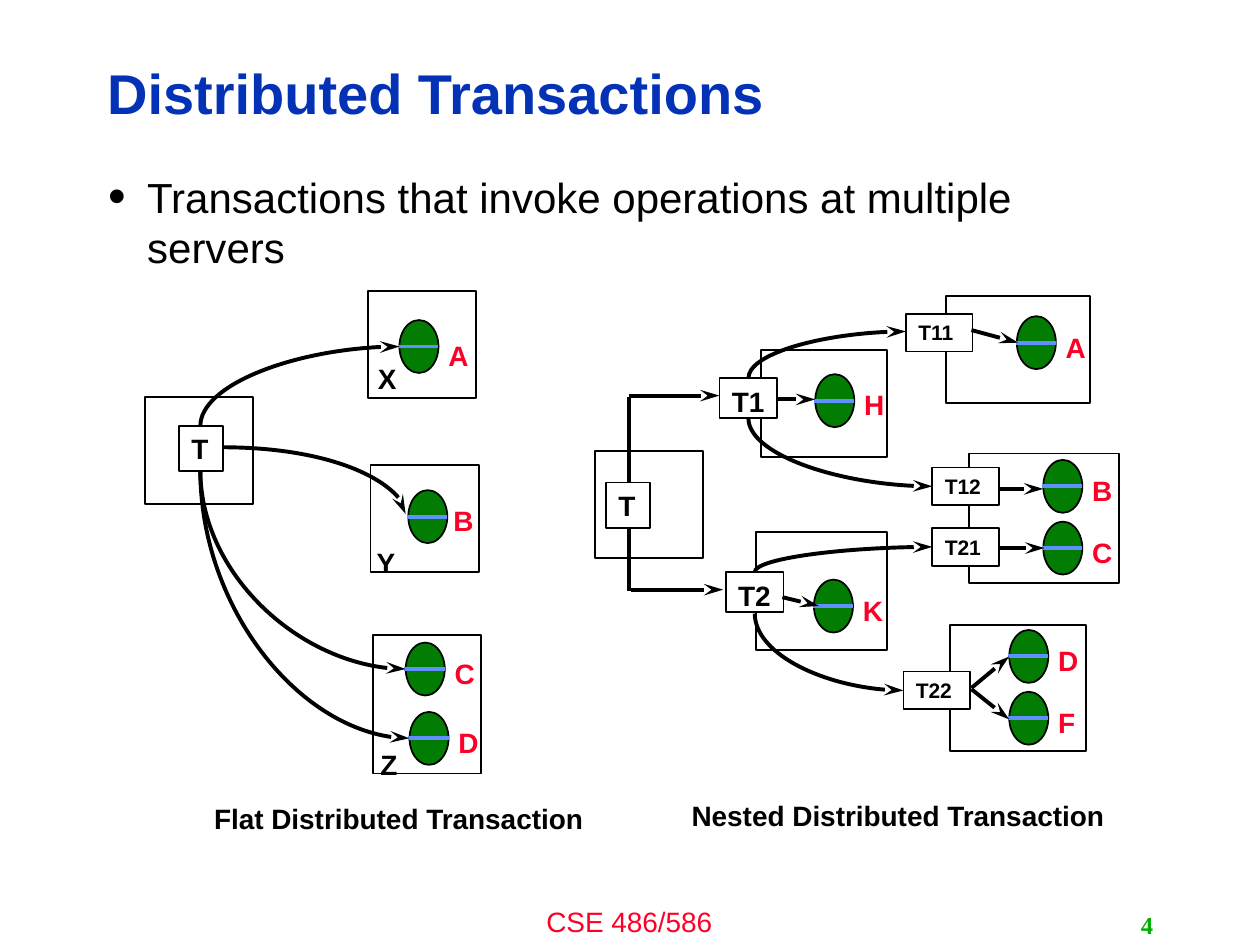
from dataclasses import dataclass

from lxml.etree import SubElement
from pptx import Presentation
from pptx.dml.color import RGBColor
from pptx.enum.shapes import MSO_CONNECTOR as Link, MSO_SHAPE as Shape
from pptx.enum.text import MSO_ANCHOR as Anchor, MSO_AUTO_SIZE as AutoSize, PP_ALIGN as Align
from pptx.oxml.ns import qn
from pptx.slide import Slide
from pptx.util import Inches, Pt

BLACK = RGBColor(0, 0, 0)
WHITE = RGBColor(255, 255, 255)
BLUE = RGBColor(0x03, 0x32, 0xB7)
RED = RGBColor(0xFC, 0x01, 0x28)
GREEN = RGBColor(0x03, 0x7C, 0x03)
BRIGHT_GREEN = RGBColor(0, 0xAE, 0)
SKY = RGBColor(0x61, 0x8F, 0xFD)


def write(holder, text, size, color, bold=True, align=Align.LEFT, font="Arial"):
    """Write one formatted paragraph into a shape and return it."""
    frame = holder.text_frame
    frame.text = text
    frame.word_wrap = True
    frame.auto_size = AutoSize.NONE
    para = frame.paragraphs[0]
    para.alignment = align
    for span in para.runs:
        span.font.name = font
        span.font.size = Pt(size)
        span.font.bold = bold
        span.font.color.rgb = color
    return para


@dataclass
class Diagram:
    """Draws parts of a transaction diagram relative to its top left corner."""

    page: Slide
    left: float
    top: float

    def place(self, x, y):
        """Turn a position in the diagram into one on the page."""
        return Inches(self.left + x), Inches(self.top + y)

    def outline(self, kind, x, y, width, height, fill=None):
        """Add a thin black outlined shape."""
        box = self.page.shapes.add_shape(kind, *self.place(x, y), Inches(width), Inches(height))
        box.shadow.inherit = False
        box.line.color.rgb = BLACK
        box.line.width = Pt(1)
        if fill is None:
            box.fill.background()
        else:
            box.fill.solid()
            box.fill.fore_color.rgb = fill
        return box

    def server(self, x, y, width=0.86, height=0.85):
        """Add a server frame."""
        self.outline(Shape.RECTANGLE, x, y, width, height)

    def node(self, name, x, y, width, height, size=16):
        """Add a named transaction box."""
        box = self.outline(Shape.RECTANGLE, x, y, width, height, WHITE)
        write(box, name, size, BLACK)
        box.text_frame.vertical_anchor = Anchor.TOP
        box.text_frame.margin_right = 0

    def label(self, text, x, y, color=BLACK, width=0.35, height=0.31):
        """Add a bold label."""
        box = self.page.shapes.add_textbox(*self.place(x, y), Inches(width), Inches(height))
        write(box, text, 16, color)
        box.text_frame.margin_right = 0

    def item(self, name, x, y, gap=0.29, drop=0.06):
        """Add a data object: a disk, its middle line and its name."""
        self.outline(Shape.OVAL, x, y, 0.31, 0.42, GREEN)
        self.link(x - 0.01, y + 0.21, x + 0.31, y + 0.21, color=SKY)
        self.label(name, x + gap, y + drop, RED)

    def link(self, x1, y1, x2, y2, arrow=False, kind=Link.STRAIGHT, color=BLACK):
        """Add a thick line, with an arrowhead if asked."""
        line = self.page.shapes.add_connector(kind, *self.place(x1, y1), *self.place(x2, y2))
        line.line.color.rgb = color
        line.line.width = Pt(2.25)
        if arrow:
            SubElement(line.line._get_or_add_ln(), qn("a:tailEnd"), type="stealth", w="med", len="lg")
        SubElement(line._element.spPr, qn("a:effectLst"))
        return line

    def curve(self, x1, y1, x2, y2, upright=True):
        """Add a quarter bend arrow that leaves vertically or horizontally."""
        ends = x1, y1, x2, y2
        if upright:
            mid_x, mid_y = (x1 + x2) / 2, (y1 + y2) / 2
            half_run, half_drop = (x2 - x1) / 2, (y2 - y1) / 2
            ends = mid_x + half_drop, mid_y - half_run, mid_x - half_drop, mid_y + half_run
        properties = self.link(*ends, arrow=True, kind=Link.CURVE)._element.spPr
        properties.find(qn("a:prstGeom")).set("prst", "curvedConnector2")
        if upright:
            properties.find(qn("a:xfrm")).set("rot", str(270 * 60000))


def draw_flat(page, left, top):
    """Draw the flat distributed transaction."""
    flat = Diagram(page, left, top)
    for x, y in ((0, 0.84), (1.77, 0), (1.79, 1.38)):
        flat.server(x, y)
    flat.server(1.81, 2.73, height=1.1)
    flat.item("A", 2.02, 0.23, drop=0.1)
    flat.item("B", 2.09, 1.58, gap=0.26)
    flat.item("C", 2.07, 2.79)
    flat.item("D", 2.1, 3.34)
    flat.curve(0.44, 1.07, 2.02, 0.44)
    flat.curve(0.61, 1.24, 2.07, 1.77, upright=False)
    for x, y in ((2.07, 3), (2.1, 3.55)):
        flat.curve(0.44, 1.42, x, y)
    flat.node("T", 0.27, 1.07, 0.35, 0.36)
    for name, x, y in (("X", 1.75, 0.51), ("Y", 1.74, 1.97), ("Z", 1.77, 3.57)):
        flat.label(name, x, y)
    flat.label("Flat Distributed Transaction", 0.45, 4, width=3.58, height=0.34)


def draw_nested(page, left, top):
    """Draw the nested distributed transaction."""
    nested = Diagram(page, left, top)
    servers = ((0, 1.23, 0.86, 0.85), (1.32, 0.43, 1, 0.85), (1.28, 1.87, 1.04, 0.94),
               (2.79, 0, 1.14, 0.85), (2.97, 1.25, 1.19, 1.03), (2.82, 2.61, 1.08, 1))
    for server in servers:
        nested.server(*server)
    nested.node("T", 0.09, 1.48, 0.35, 0.36)
    for name, x, y in (("T1", 0.99, 0.65), ("T2", 1.04, 2.19)):
        nested.node(name, x, y, 0.46, 0.32)
    leaves = (("T11", 2.47, 0.14), ("T12", 2.68, 1.36), ("T21", 2.68, 1.84), ("T22", 2.45, 2.98))
    for name, x, y in leaves:
        nested.node(name, x, y, 0.53, 0.3, size=12)
    items = (("A", 3.35, 0.16), ("B", 3.56, 1.3), ("C", 3.56, 1.79), ("D", 3.29, 2.65),
             ("F", 3.29, 3.14), ("H", 1.75, 0.62), ("K", 1.74, 2.25))
    for item in items:
        nested.item(*item)
    curves = ((1.27, 2.52, 2.45, 3.13), (1.22, 0.65, 2.47, 0.28),
              (1.22, 0.97, 2.68, 1.51), (1.27, 2.19, 2.68, 1.99))
    for curve in curves:
        nested.curve(*curve)
    for start, end in ((1.48, 0.8), (2.34, 1.84)):
        nested.link(0.27, start, 0.27, end)
    arrows = ((0.27, 0.79, 0.99, 0.79), (0.29, 2.33, 1.02, 2.33), (1.45, 0.82, 1.75, 0.82),
              (1.49, 2.39, 1.78, 2.46), (2.99, 0.27, 3.36, 0.37), (3.21, 1.53, 3.56, 1.53),
              (3.21, 2, 3.57, 2), (2.99, 3.11, 3.29, 2.86), (2.99, 3.12, 3.29, 3.36))
    for arrow in arrows:
        nested.link(*arrow, arrow=True)
    nested.label("Nested Distributed Transaction", 0.67, 3.94, width=3.58, height=0.34)


def add_title(page, left, top, width, height):
    """Move and format the title placeholder."""
    title = page.shapes.title
    title.left, title.top = Inches(left), Inches(top)
    title.width, title.height = Inches(width), Inches(height)
    write(title, "Distributed Transactions", 32, BLUE).line_spacing = 0.9
    title.text_frame.vertical_anchor = Anchor.MIDDLE


def add_body(page, left, top, width, height):
    """Add the bulleted statement."""
    box = page.shapes.add_textbox(Inches(left), Inches(top), Inches(width), Inches(height))
    para = write(box, "Transactions that invoke operations at multiple servers", 24, BLACK, bold=False)
    properties = para._p.get_or_add_pPr()
    properties.set("marL", str(Inches(0.31)))
    properties.set("indent", str(Inches(-0.31)))
    SubElement(properties, qn("a:buSzPct"), val="120000")
    SubElement(properties, qn("a:buFont"), typeface="Arial")
    SubElement(properties, qn("a:buChar"), char="•")


def add_footer(page, top):
    """Add the course name and the page number."""
    course = page.shapes.add_textbox(Inches(3.33), Inches(top), Inches(3.33), Inches(0.37))
    write(course, "CSE 486/586", 16, RED, bold=False, align=Align.CENTER)
    number = page.shapes.add_textbox(Inches(7.17), Inches(top + 0.05), Inches(2.08), Inches(0.32))
    write(number, "4", 14, BRIGHT_GREEN, align=Align.RIGHT, font="Times New Roman")
    number.text_frame.vertical_anchor = Anchor.MIDDLE


def main():
    """Build the deck and save it."""
    deck = Presentation()
    deck.slide_width, deck.slide_height = Inches(10), Inches(7.5)
    page = deck.slides.add_slide(deck.slide_layouts[5])
    add_title(page, 0.75, 0.36, 7.98, 0.81)
    add_body(page, 0.76, 1.31, 8.4, 0.95)
    draw_flat(page, 1.15, 2.31)
    draw_nested(page, 4.72, 2.35)
    add_footer(page, 7.13)
    deck.save("out.pptx")


if __name__ == "__main__":
    main()
